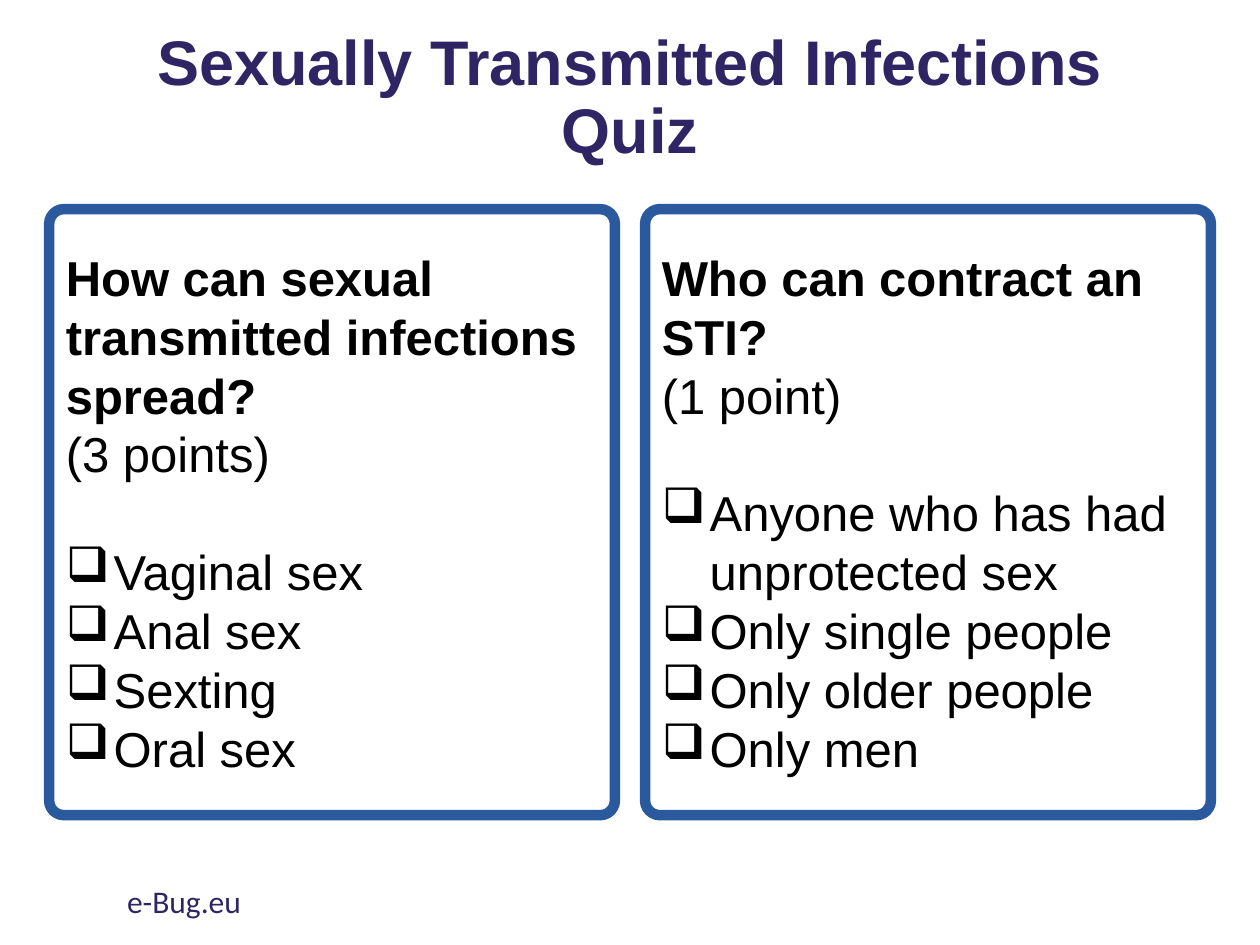
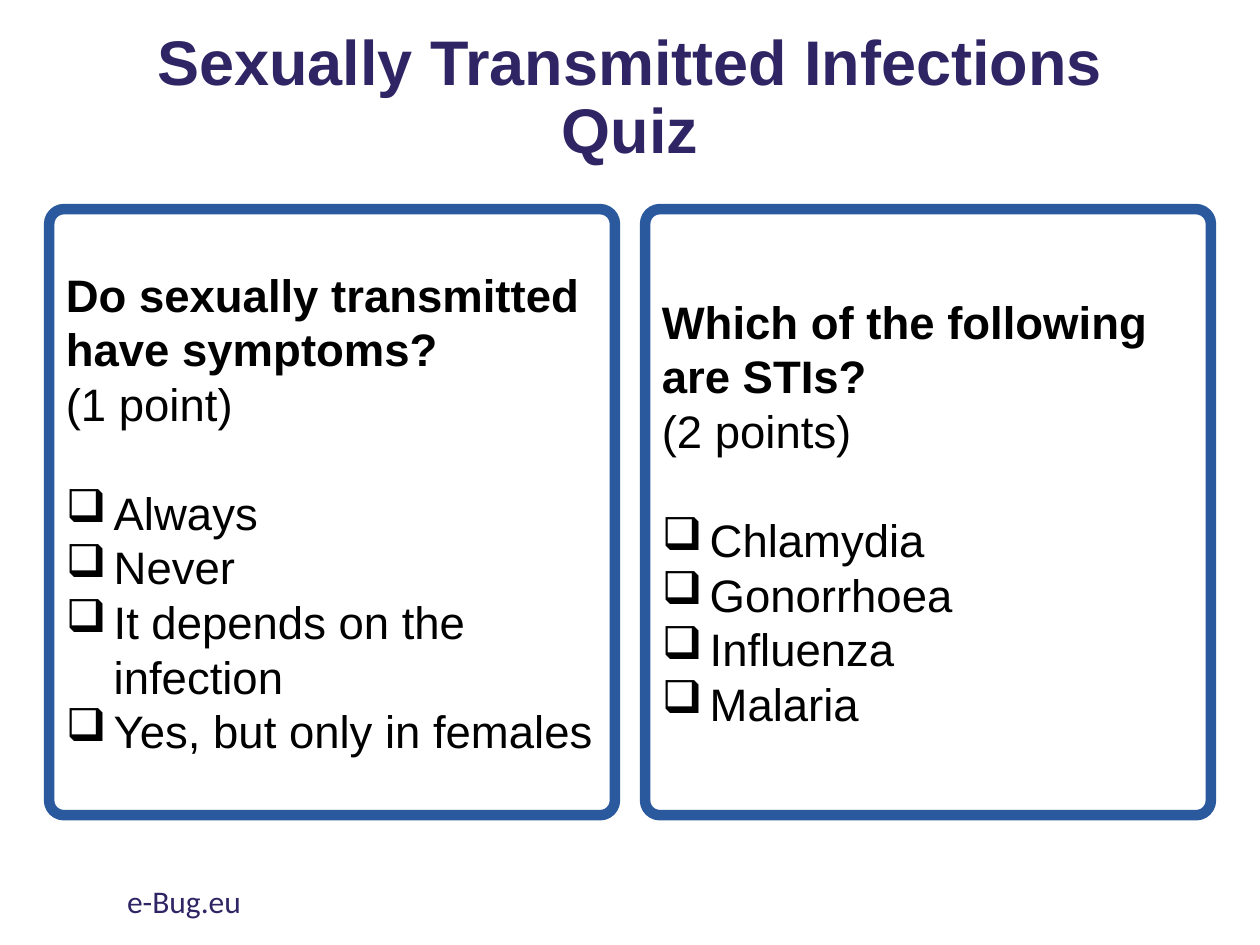
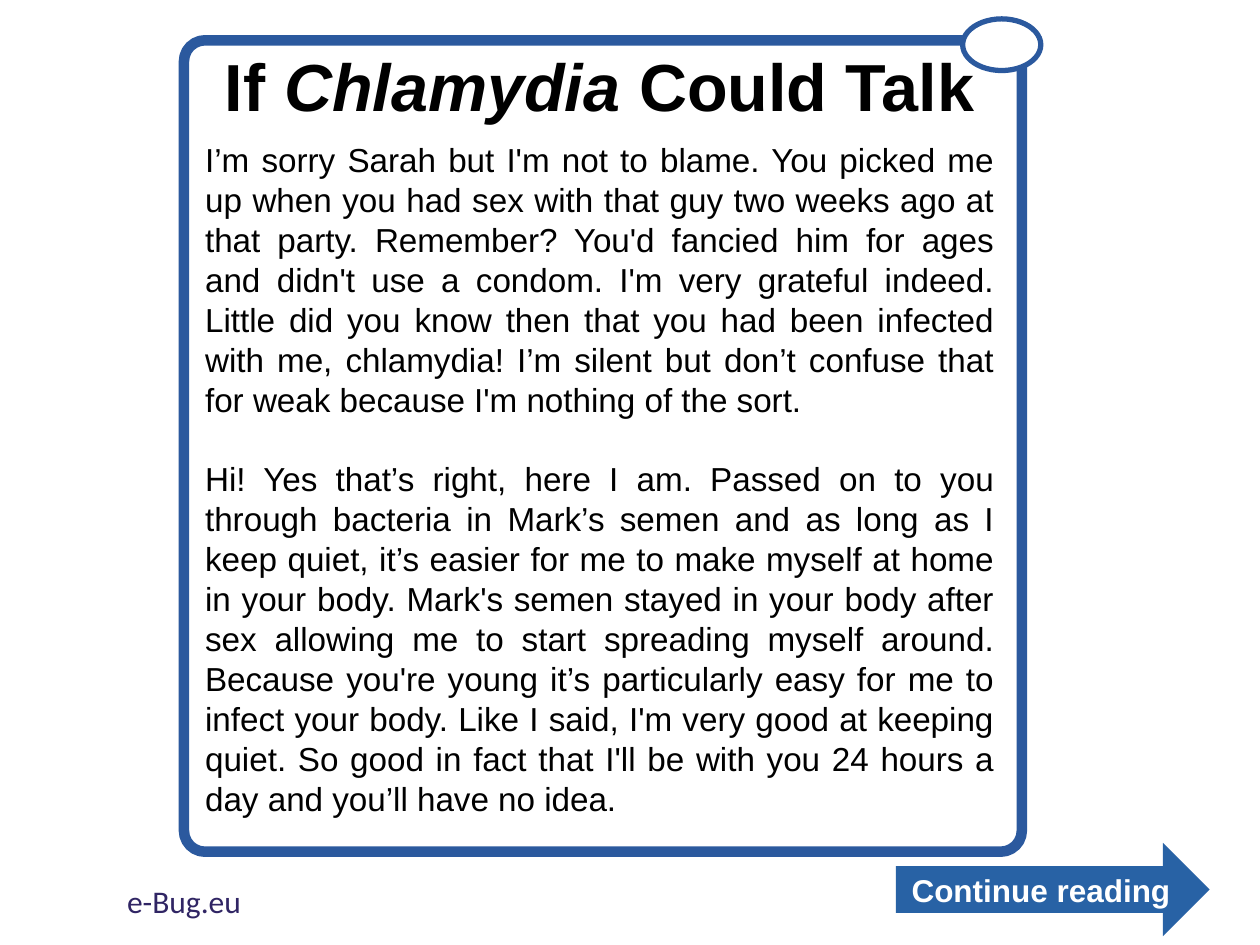
from dataclasses import dataclass

from lxml.etree import SubElement
from pptx import Presentation
from pptx.dml.color import RGBColor
from pptx.enum.shapes import MSO_SHAPE as Kind
from pptx.enum.text import MSO_ANCHOR as Anchor, MSO_AUTO_SIZE as Fit, PP_ALIGN as Align
from pptx.oxml.ns import qn
from pptx.util import Emu, Inches, Pt

# Theme
NAVY = RGBColor(0x30, 0x25, 0x64)
BLUE = RGBColor(0x2B, 0x59, 0x9E)
ARROW = RGBColor(0x28, 0x62, 0xA5)
BLACK = RGBColor(0, 0, 0)
WHITE = RGBColor(255, 255, 255)
FONT = "Arial"

# Grid: 100 columns by 75 rows
WIDTH, HEIGHT = Inches(10), Inches(7.5)
COL, ROW = WIDTH / 100, HEIGHT / 75
MARGIN, GAP = 3.9, 2.4
CARD = (100 - 2 * MARGIN - GAP) / 2
CURVE = 0.026
LINE = 1.2  # height of a text line as a share of its size
HANG = Inches(0.38)


@dataclass(frozen=True)
class Box:
    col: float
    row: float
    cols: float
    rows: float

    def place(self) -> tuple[Emu, Emu, Emu, Emu]:
        return (Emu(round(self.col * COL)), Emu(round(self.row * ROW)),
                Emu(round(self.cols * COL)), Emu(round(self.rows * ROW)))


@dataclass(frozen=True)
class Card:
    ask: str
    score: str
    picks: tuple[str, ...]


@dataclass(frozen=True)
class Quiz:
    size: int
    cards: tuple[Card, Card]


QUIZZES = (
    Quiz(28, (
        Card("How can sexual transmitted infections spread?", "(3 points)",
             ("Vaginal sex", "Anal sex", "Sexting", "Oral sex")),
        Card("Who can contract an STI?", "(1 point)",
             ("Anyone who has had unprotected sex", "Only single people",
              "Only older people", "Only men")),
    )),
    Quiz(26, (
        Card("Do sexually transmitted have symptoms?", "(1 point)",
             ("Always", "Never", "It depends on the infection",
              "Yes, but only in females")),
        Card("Which of the following are STIs?", "(2 points)",
             ("Chlamydia", "Gonorrhoea", "Influenza", "Malaria")),
    )),
)

STORY = (
    "I’m sorry Sarah but I'm not to blame. You picked me up when you had sex "
    "with that guy two weeks ago at that party. Remember? You'd fancied him "
    "for ages and didn't use a condom. I'm very grateful indeed. Little did "
    "you know then that you had been infected with me, chlamydia! I’m silent "
    "but don’t confuse that for weak because I'm nothing of the sort.",
    "Hi! Yes that’s right, here I am. Passed on to you through bacteria in "
    "Mark’s semen and as long as I keep quiet, it’s easier for me to make "
    "myself at home in your body. Mark's semen stayed in your body after sex "
    "allowing me to start spreading myself around. Because you're young it’s "
    "particularly easy for me to infect your body. Like I said, I'm very good "
    "at keeping quiet. So good in fact that I'll be with you 24 hours a day "
    "and you’ll have no idea.",
)


# Text helpers
def style(para, size: float, color: RGBColor = BLACK, bold: bool = False,
          align: Align = Align.LEFT, name: str = FONT) -> None:
    para.alignment = align
    for run in para.runs:
        font = run.font
        font.name, font.size, font.bold = name, Pt(size), bold
        font.color.rgb = color


def fill_frame(frame, lines: tuple[str, ...], anchor: Anchor = Anchor.TOP) -> list:
    frame.word_wrap = True
    frame.auto_size = Fit.NONE
    frame.vertical_anchor = anchor
    frame.text = "\n".join(lines)
    return list(frame.paragraphs)


def add_box(para) -> None:
    props = para._p.get_or_add_pPr()
    props.set("marL", str(HANG))
    props.set("indent", str(-HANG))
    SubElement(props, qn("a:buChar"), char="❑")
    tabs = SubElement(props, qn("a:tabLst"))
    SubElement(tabs, qn("a:tab"), pos=str(Inches(0.5)), algn="l")


# Shape helpers
def add_shape(slide, kind: Kind, box: Box, fill: RGBColor | None = None,
              weight: float = 0):
    shape = slide.shapes.add_shape(kind, *box.place())
    shape.shadow.inherit = False
    if fill is None:
        shape.fill.background()
    else:
        shape.fill.solid()
        shape.fill.fore_color.rgb = fill
    if weight:
        shape.line.color.rgb = BLUE
        shape.line.width = Pt(weight)
    else:
        shape.line.fill.background()
    return shape


def add_frame(slide, box: Box):
    shape = add_shape(slide, Kind.ROUNDED_RECTANGLE, box, weight=6)
    shape.adjustments[0] = CURVE
    return shape


def add_text(slide, box: Box, *lines: str) -> list:
    return fill_frame(slide.shapes.add_textbox(*box.place()).text_frame, lines)


def new_slide(deck, title: str, box: Box, size: float, color: RGBColor,
              anchor: Anchor, space: float):
    slide = deck.slides.add_slide(deck.slide_layouts[5])
    head = slide.shapes.title
    head.left, head.top, head.width, head.height = box.place()
    para, = fill_frame(head.text_frame, (title,), anchor)
    para.line_spacing = space
    style(para, size, color, True, Align.CENTER)
    foot, = add_text(slide, Box(9.1, 69.5, 33.8, 4), "e-Bug.eu")
    style(foot, 18, NAVY, name="Calibri")
    return slide


def add_card(slide, card: Card, box: Box, size: int) -> None:
    frame = add_frame(slide, box).text_frame
    paras = fill_frame(frame, (card.ask, card.score, *card.picks), Anchor.MIDDLE)
    ask, _, *picks = paras
    for para in picks:
        add_box(para)
    picks[0].space_before = Pt(size * LINE)
    for para in paras:
        style(para, size, bold=para is ask)


# Slides
def add_quiz(deck, quiz: Quiz) -> None:
    slide = new_slide(deck, "Sexually Transmitted Infections Quiz",
                      Box(6.9, 3.3, 86.2, 9.1), 36, NAVY, Anchor.MIDDLE, 0.9)
    for i, card in enumerate(quiz.cards):
        box = Box(MARGIN + i * (CARD + GAP), 16.6, CARD, 48.1)
        add_card(slide, card, box, quiz.size)


def add_story(deck) -> None:
    slide = new_slide(deck, "If Chlamydia Could Talk",
                      Box(16.3, 3.1, 62.6, 7.4), 38, BLACK, Anchor.TOP, 1.0)
    para = slide.shapes.title.text_frame.paragraphs[0]
    para.text = ""
    for part in ("If ", "Chlamydia", " Could Talk"):
        run = para.add_run()
        run.text = part
        run.font.italic = part == "Chlamydia"
    style(para, 38, BLACK, True, Align.CENTER)

    add_frame(slide, Box(14.6, 3.2, 66.5, 64.4))
    add_shape(slide, Kind.OVAL, Box(76.4, 1.5, 6.2, 4.1), WHITE, 3)
    paras = add_text(slide, Box(15.3, 10.6, 64.6, 58.6), *STORY)
    for para in paras:
        style(para, 19, align=Align.JUSTIFY)
    paras[1].space_before = Pt(19 * LINE)

    arrow = add_shape(slide, Kind.RIGHT_ARROW, Box(71.1, 66.9, 24.9, 7.4), ARROW)
    label, = fill_frame(arrow.text_frame, ("Continue reading",), Anchor.MIDDLE)
    style(label, 18, WHITE, True, Align.CENTER)


def main() -> None:
    deck = Presentation()
    deck.slide_width, deck.slide_height = WIDTH, HEIGHT
    for quiz in QUIZZES:
        add_quiz(deck, quiz)
    add_story(deck)
    deck.save("out.pptx")


if __name__ == "__main__":
    main()
